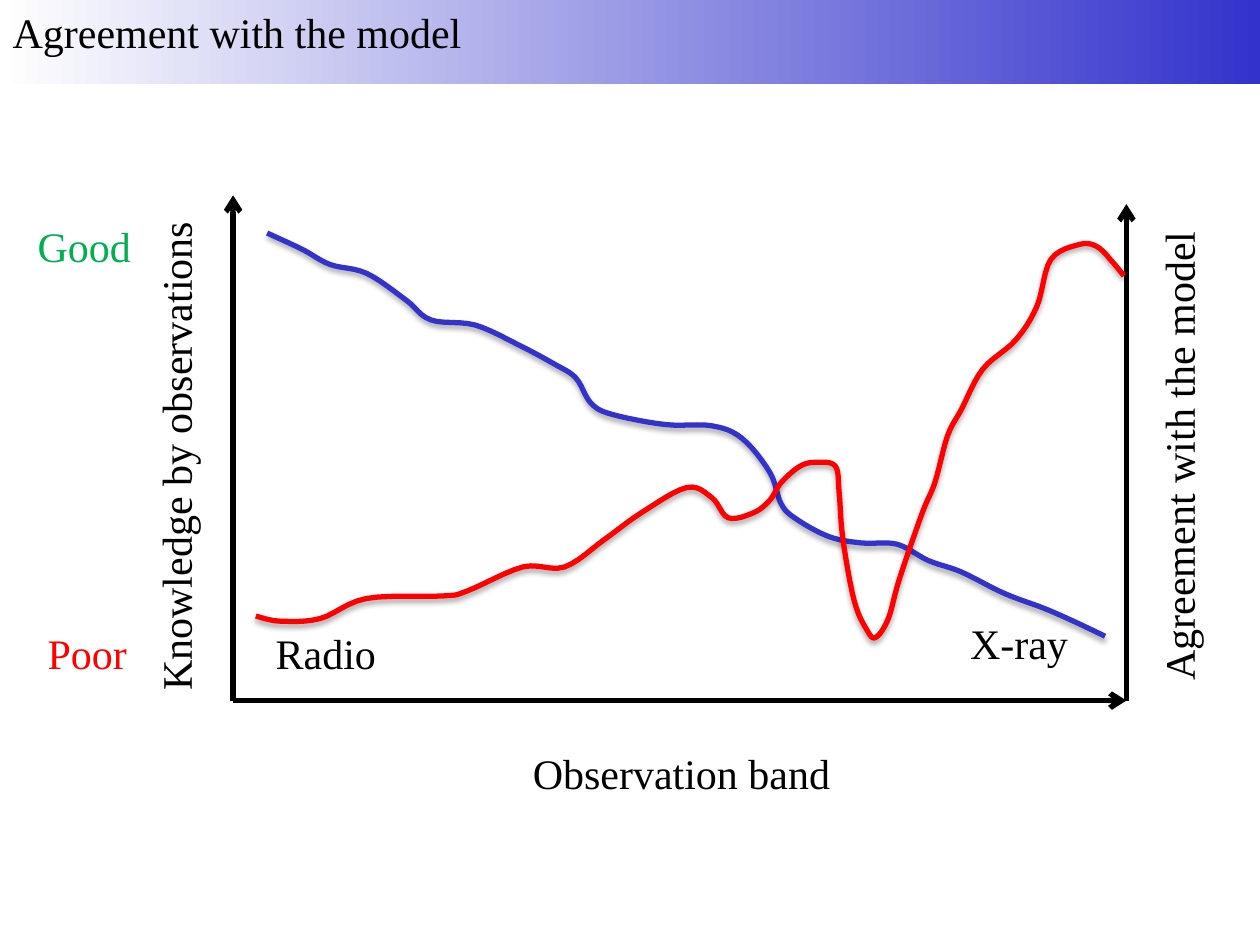
"""Build a slide of observational knowledge and model agreement across bands."""
from lxml import etree
from pptx import Presentation
from pptx.dml.color import RGBColor
from pptx.enum.shapes import MSO_CONNECTOR, MSO_SHAPE
from pptx.enum.text import MSO_ANCHOR, MSO_AUTO_SIZE, PP_ALIGN
from pptx.oxml.ns import qn
from pptx.util import Inches, Pt

STRAIGHT = MSO_CONNECTOR.STRAIGHT
RECTANGLE = MSO_SHAPE.RECTANGLE
TOP = MSO_ANCHOR.TOP
NO_AUTOFIT = MSO_AUTO_SIZE.NONE
LEFT = PP_ALIGN.LEFT
FONT = "Times New Roman"
TEXT_SIZE = Pt(24)
LINE_WIDTH = Pt(3)
LABEL_HEIGHT = 0.5
UPRIGHT, SIDEWAYS = 0, 270
STEPS_PER_SPAN = 6
COLORS = {
    "black": RGBColor.from_string("000000"),
    "white": RGBColor.from_string("FFFFFF"),
    "blue": RGBColor.from_string("3333CC"),
    "green": RGBColor.from_string("00B050"),
    "red": RGBColor.from_string("FF0000"),
}


def write_label(frame, wording, color):
    """Write one unwrapped line of text in the slide's style."""
    frame.text = wording
    frame.word_wrap = False
    frame.auto_size = NO_AUTOFIT
    frame.vertical_anchor = TOP
    frame.margin_left = frame.margin_right = Inches(0.1)
    frame.margin_top = frame.margin_bottom = Inches(0.05)
    paragraph = frame.paragraphs[0]
    paragraph.alignment = LEFT
    font = paragraph.runs[0].font
    font.name, font.size, font.color.rgb = FONT, TEXT_SIZE, COLORS[color]


def smooth_curve(knots):
    """Return points of a Catmull-Rom spline that passes through every knot."""
    padded = [knots[0], *knots, knots[-1]]
    points = [knots[0]]
    for before, start, end, after in zip(padded, padded[1:], padded[2:], padded[3:]):
        for step in range(1, STEPS_PER_SPAN + 1):
            t = step / STEPS_PER_SPAN
            weights = (
                (-t + 2 * t**2 - t**3) / 2,
                (2 - 5 * t**2 + 3 * t**3) / 2,
                (t + 4 * t**2 - 3 * t**3) / 2,
                (t**3 - t**2) / 2,
            )
            span = (before, start, end, after)
            points.append(tuple(
                sum(weight * knot[axis] for weight, knot in zip(weights, span))
                for axis in (0, 1)
            ))
    return points


prs = Presentation()
prs.slide_width, prs.slide_height = Inches(10), Inches(7.5)
slide = prs.slides.add_slide(prs.slide_layouts[5])

title = slide.shapes.title
title.left, title.top = Inches(0), Inches(0)
title.width, title.height = Inches(3.8), Inches(LABEL_HEIGHT)
write_label(title.text_frame, "Agreement with the model", "black")

banner = slide.shapes.add_shape(RECTANGLE, 0, 0, prs.slide_width, Inches(0.67))
banner.shadow.inherit = False
banner.line.fill.background()
banner.fill.gradient()
banner.fill.gradient_angle = 0
for stop, position, color in zip(banner.fill.gradient_stops, (0, 1), ("white", "blue")):
    stop.position = position
    stop.color.rgb = COLORS[color]
title.element.addprevious(banner.element)

axis_left, axis_right, axis_base = 1.85, 8.94, 5.56
knowledge_top, agreement_top = 1.55, 1.62
band_axis = (axis_left, axis_right, axis_base)
knowledge_axis = (axis_left, axis_left, knowledge_top)
agreement_axis = (axis_right, axis_right, agreement_top)
for start_x, end_x, end_y in (band_axis, knowledge_axis, agreement_axis):
    arrow = slide.shapes.add_connector(
        STRAIGHT, Inches(start_x), Inches(axis_base), Inches(end_x), Inches(end_y)
    )
    arrow.line.color.rgb = COLORS["black"]
    arrow.line.width = LINE_WIDTH
    properties = arrow.element.spPr
    etree.SubElement(properties.find(qn("a:ln")), qn("a:tailEnd"), type="arrow")
    etree.SubElement(properties, qn("a:effectLst"))

labels = [
    ("Observation band", 4.13, 5.88, 2.58, UPRIGHT, "black"),
    ("Radio", 2.09, 4.93, 1, UPRIGHT, "black"),
    ("X-ray", 7.6, 4.85, 0.99, UPRIGHT, "black"),
    ("Knowledge by observations", -0.59, 3.35, 3.96, SIDEWAYS, "black"),
    ("Good", 0.2, 1.7, 0.95, UPRIGHT, "green"),
    ("Poor", 0.28, 4.93, 0.84, UPRIGHT, "red"),
    ("Agreement with the model", 7.45, 3.35, 3.8, SIDEWAYS, "black"),
]
for wording, left, top, width, rotation, color in labels:
    label = slide.shapes.add_textbox(
        Inches(left), Inches(top), Inches(width), Inches(LABEL_HEIGHT)
    )
    label.rotation = rotation
    write_label(label.text_frame, wording, color)

radio_decline = [(2.12, 1.85), (2.4, 1.98), (2.62, 2.1), (2.91, 2.17), (3.22, 2.38)]
upper_shelf = [(3.42, 2.54), (3.77, 2.58), (4.12, 2.74), (4.4, 2.89), (4.57, 3)]
middle_shelf = [(4.69, 3.2), (4.86, 3.29), (5.28, 3.37), (5.65, 3.38), (5.89, 3.48)]
lower_shelf = [(6.11, 3.75), (6.2, 4), (6.32, 4.12), (6.58, 4.26), (6.84, 4.31), (7.12, 4.32)]
xray_decline = [(7.37, 4.45), (7.63, 4.54), (7.97, 4.71), (8.29, 4.83), (8.54, 4.94), (8.77, 5.05)]
knowledge = radio_decline + upper_shelf + middle_shelf + lower_shelf + xray_decline

radio_rise = [(2.03, 4.89), (2.22, 4.93), (2.54, 4.91), (2.91, 4.75), (3.52, 4.73), (3.71, 4.69)]
first_hump = [(4.15, 4.5), (4.48, 4.5), (4.8, 4.28), (5.09, 4.07), (5.45, 3.87), (5.65, 3.95)]
second_hump = [(5.78, 4.11), (5.98, 4.07), (6.11, 3.97), (6.2, 3.83), (6.35, 3.7), (6.48, 3.67)]
deep_dip = [(6.63, 3.7), (6.66, 3.91), (6.69, 4.28), (6.78, 4.77), (6.88, 5), (6.95, 5.06), (7.05, 4.91)]
steep_climb = [(7.14, 4.59), (7.32, 4.07), (7.42, 3.83), (7.52, 3.46), (7.63, 3.25), (7.8, 2.93)]
xray_peak = [(8.06, 2.7), (8.23, 2.43), (8.34, 2.06), (8.57, 1.94), (8.71, 1.96), (8.83, 2.08), (8.92, 2.19)]
agreement = radio_rise + first_hump + second_hump + deep_dip + steep_climb + xray_peak

for knots, color in ((knowledge, "blue"), (agreement, "red")):
    start, *rest = [(Inches(x), Inches(y)) for x, y in smooth_curve(knots)]
    outline = slide.shapes.build_freeform(*start)
    outline.add_line_segments(rest, close=False)
    curve = outline.convert_to_shape()
    curve.fill.background()
    curve.line.color.rgb = COLORS[color]
    curve.line.width = LINE_WIDTH
    curve.shadow.inherit = False
    effects = curve.element.spPr.find(qn("a:effectLst"))
    shadow = etree.SubElement(
        effects, qn("a:outerShdw"), blurRad=str(Pt(3.1)), dist=str(Pt(1.8)),
        dir="5400000", rotWithShape="0",
    )
    shadow_color = etree.SubElement(shadow, qn("a:srgbClr"), val=str(COLORS["black"]))
    etree.SubElement(shadow_color, qn("a:alpha"), val="35000")

prs.save("out.pptx")
